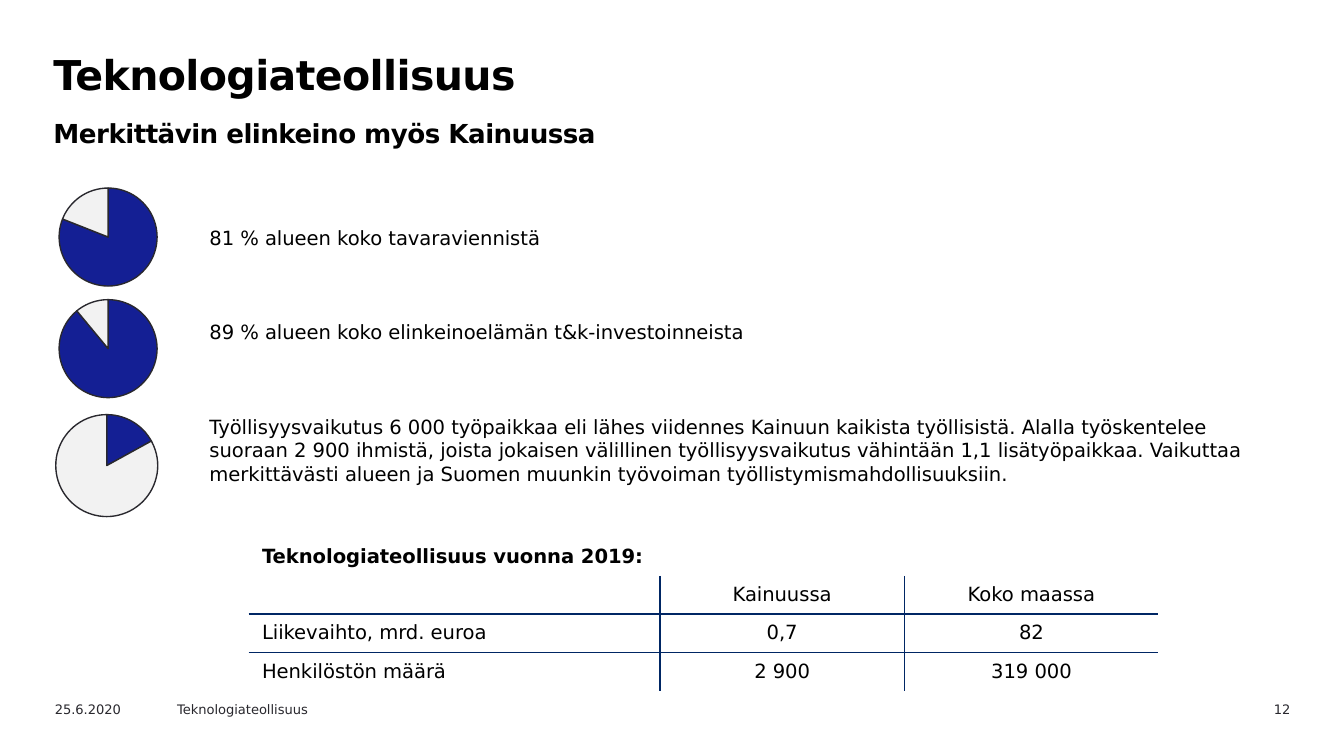
"""Builds a slide on the technology industry in Kainuu with three pies and a table."""
from lxml import etree
from pptx import Presentation
from pptx import util as u
from pptx.chart.data import CategoryChartData
from pptx.dml.color import RGBColor
from pptx.enum import chart as charts, text
from pptx.oxml import parse_xml
from pptx.oxml.ns import nsdecls, qn

BLACK = RGBColor(0x00, 0x00, 0x00)
CHARCOAL = RGBColor(0x29, 0x28, 0x2E)
BLUE = RGBColor(0x14, 0x1F, 0x94)
PALE = RGBColor(0xF2, 0xF2, 0xF2)
NAVY = RGBColor(0x00, 0x26, 0x64)
FONT = "DejaVu Sans"
CENTER, RIGHT = text.PP_ALIGN.CENTER, text.PP_ALIGN.RIGHT


def style(font, size, color, bold=False):
    font.name, font.size, font.bold = FONT, u.Pt(size), bold
    font.color.rgb = color


def add_box(left, top, width, height):
    box = page.shapes.add_textbox(u.Inches(left), u.Inches(top), u.Inches(width), u.Inches(height))
    box.text_frame.word_wrap = True
    return box.text_frame


deck = Presentation()
deck.slide_width, deck.slide_height = u.Inches(10), u.Inches(10 * 9 / 16)
page = deck.slides.add_slide(deck.slide_layouts[6])

para = add_box(0.28, 0.31, 8.74, 0.71).paragraphs[0]
para.line_spacing = u.Pt(27)
para._p.get_or_add_pPr().set("marL", str(u.Inches(0.02)))
for words, size in [("Teknologiateollisuus", 22), ("Merkittävin elinkeino myös Kainuussa", 14)]:
    if para.runs:
        para.add_line_break()
    span = para.add_run()
    span.text = words
    style(span.font, size, BLACK, True)
    span.font._element.set("spc", "-30")

for words, left, width, align in [
    ("12", 8.76, 0.94, RIGHT),
    ("25.6.2020", 0.31, 1, None),
    ("Teknologiateollisuus", 1.22, 1.42, None),
]:
    para = add_box(left, 5.17, width, 0.18).paragraphs[0]
    para.text, para.alignment = words, align
    style(para.font, 7, CHARCOAL)

facts = [
    "81 % alueen koko tavaraviennistä",
    "89 % alueen koko elinkeinoelämän t&k-investoinneista",
    "Työllisyysvaikutus 6 000 työpaikkaa eli lähes viidennes Kainuun kaikista työllisistä. "
    "Alalla työskentelee suoraan 2 900 ihmistä, joista jokaisen välillinen työllisyysvaikutus "
    "vähintään 1,1 lisätyöpaikkaa. Vaikuttaa merkittävästi alueen ja Suomen muunkin työvoiman "
    "työllistymismahdollisuuksiin.",
]
frame = add_box(1.46, 1.63, 8.19, 2.42)
for index, fact in enumerate(facts):
    para = frame.add_paragraph() if index else frame.paragraphs[0]
    para.text = fact
    if index:
        para.space_before = u.Pt(38)
    style(para.font, 10.5, BLACK)

for share, left, top, size in [(81, 0.31, 1.26, 1), (89, 0.31, 2.09, 1), (17, 0.28, 2.94, 1.04)]:
    data = CategoryChartData()
    data.categories = ["1", "2"]
    data.add_series("Series 1", (share, 100 - share))
    pie = page.shapes.add_chart(
        charts.XL_CHART_TYPE.PIE, u.Inches(left), u.Inches(top), u.Inches(size), u.Inches(size), data
    ).chart
    pie.has_legend = pie.has_title = False
    style(pie.font, 18, CHARCOAL)
    plot = pie.plots[0]
    plot.vary_by_categories = True
    for index, color in enumerate([BLUE, PALE]):
        point = plot.series[0].points[index].format
        point.fill.solid()
        point.fill.fore_color.rgb = color
        point.line.color.rgb = CHARCOAL
        point.line.width = u.Pt(0.75)
    area = pie._chartSpace.chart.plotArea
    for old in area.findall(qn("c:layout")):
        area.remove(old)
    area.insert(0, parse_xml(
        f'<c:layout {nsdecls("c")}><c:manualLayout><c:layoutTarget val="inner"/>'
        '<c:xMode val="edge"/><c:yMode val="edge"/><c:x val="0.13"/><c:y val="0.14"/>'
        '<c:w val="0.73"/><c:h val="0.73"/></c:manualLayout></c:layout>'
    ))

rows = [
    ["Teknologiateollisuus vuonna 2019:", "", ""],
    ["", "Kainuussa", "Koko maassa"],
    ["Liikevaihto, mrd. euroa", "0,7", "82"],
    ["Henkilöstön määrä", "2 900", "319 000"],
]
table = page.shapes.add_table(
    4, 3, u.Inches(1.85), u.Inches(4), u.Inches(6.77), u.Inches(1.14)
).table
table.first_row = table.horz_banding = False
for column, width in zip(table.columns, [3.06, 1.82, 1.89]):
    column.width = u.Inches(width)
for r, row in enumerate(rows):
    table.rows[r].height = u.Inches(1.14 / 4)
    for c, words in enumerate(row):
        cell = table.cell(r, c)
        cell.text = words
        cell.vertical_anchor = text.MSO_ANCHOR.MIDDLE
        para = cell.text_frame.paragraphs[0]
        para.alignment = CENTER if c else None
        style(para.font, 10.5, BLACK, r == 0)
        edges = {"lnL": r and c, "lnR": r and c < 2, "lnT": r > 1, "lnB": r in (1, 2)}
        for edge, shown in edges.items():
            line = etree.SubElement(cell._tc.get_or_add_tcPr(), qn(f"a:{edge}"), w=str(u.Pt(1)))
            if shown:
                fill = etree.SubElement(line, qn("a:solidFill"))
                etree.SubElement(fill, qn("a:srgbClr"), val=str(NAVY))
            else:
                etree.SubElement(line, qn("a:noFill"))
        cell.fill.background()
table.cell(0, 0).merge(table.cell(0, 2))

deck.save("out.pptx")
